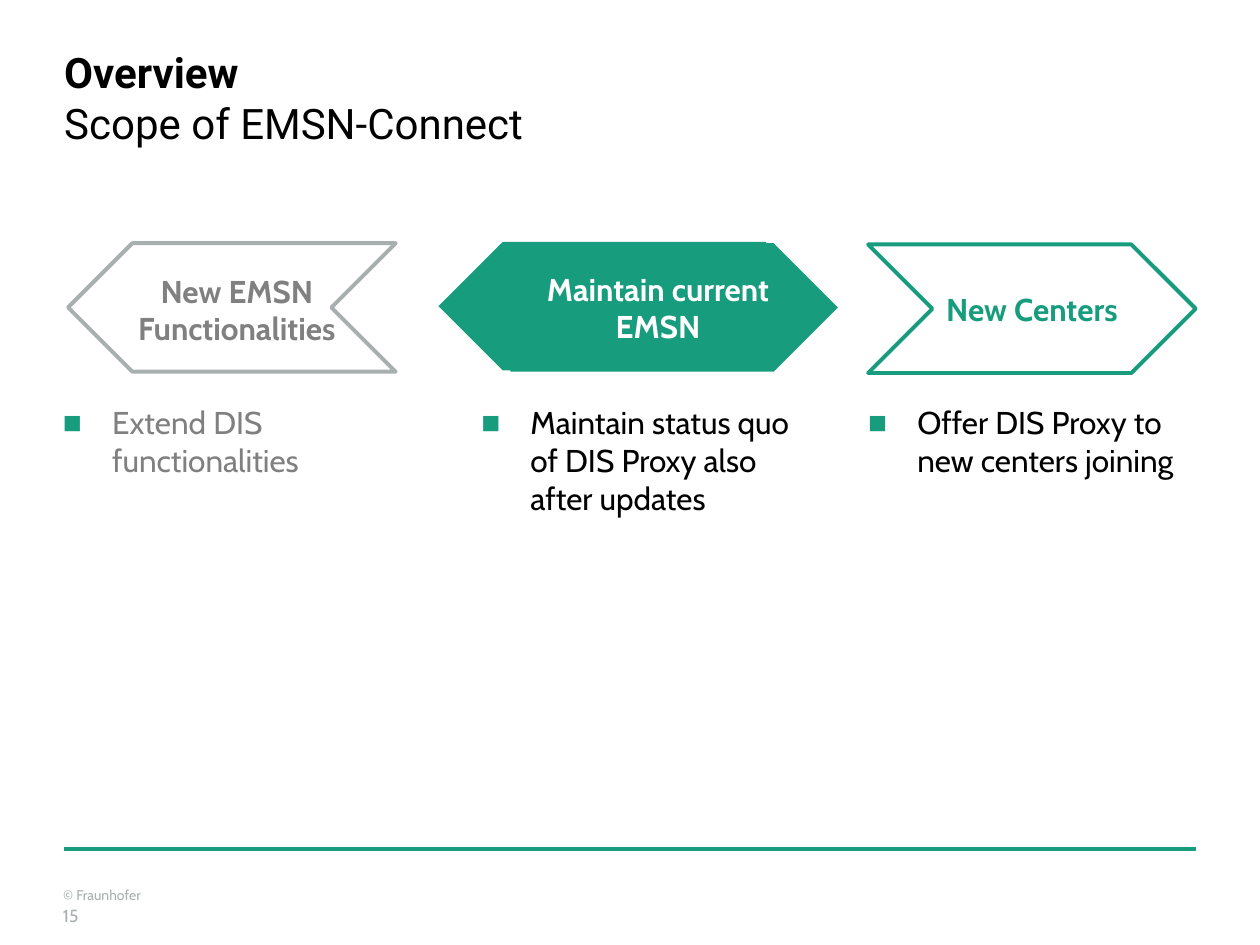
from pptx import Presentation
from pptx.dml.color import RGBColor
from pptx.enum.shapes import MSO_CONNECTOR as Connector, MSO_SHAPE as Shape
from pptx.enum.text import MSO_ANCHOR as Anchor, MSO_AUTO_SIZE as AutoSize, PP_ALIGN as Align
from pptx.oxml.ns import qn
from pptx.util import Emu, Pt
from lxml.etree import SubElement

EMU_PER_PX = 9144
GREEN, SILVER, GRAY = "179C7D", "A8AFAF", "808080"
BLACK, WHITE = "000000", "FFFFFF"


def px(*lengths):
    return [Emu(length * EMU_PER_PX) for length in lengths]


def rgb(value):
    return RGBColor.from_string(value)


class SlideBuilder:
    body_font = "Cabin"
    title_font = "Roboto"

    def __init__(self, page):
        self.page = page

    def group(self):
        return self.page.shapes.add_group_shape().shapes

    def frame(self, box, anchor=Anchor.TOP, insets=(0, 0, 0, 0)):
        frame = box.text_frame
        frame.word_wrap = True
        frame.auto_size = AutoSize.NONE
        frame.vertical_anchor = anchor
        (frame.margin_left, frame.margin_top,
         frame.margin_right, frame.margin_bottom) = px(*insets)
        return frame

    def span(self, para, text, size, color, bold=False, font=None):
        span = para.add_run()
        span.text = text
        span.font.name = font or self.body_font
        span.font.size = Pt(size)
        span.font.bold = bold
        span.font.color.rgb = rgb(color)

    def title(self, heading, subheading, *place):
        box = self.page.shapes.title
        box.left, box.top, box.width, box.height = px(*place)
        para = self.frame(box).paragraphs[0]
        para.alignment = Align.LEFT
        self.span(para, heading, 24, BLACK, True, self.title_font)
        para.add_line_break()
        self.span(para, subheading, 24, BLACK, False, self.title_font)

    def text(self, text, size, color, *place, shapes=None, **layout):
        box = (shapes or self.page.shapes).add_textbox(*px(*place))
        para = self.frame(box, **layout).paragraphs[0]
        self.span(para, text, size, color)
        return para

    def label(self, box, text, color):
        para = self.frame(box, Anchor.MIDDLE).paragraphs[0]
        para.alignment = Align.CENTER
        self.span(para, text, 18, color, True)

    def arrow(self, kind, *place, fill=None, line=None, rotation=0, shapes=None):
        arrow = (shapes or self.page.shapes).add_shape(kind, *px(*place))
        arrow.shadow.inherit = False
        arrow.rotation = rotation
        if fill:
            arrow.fill.solid()
            arrow.fill.fore_color.rgb = rgb(fill)
        else:
            arrow.fill.background()
        if line:
            arrow.line.color.rgb = rgb(line)
            arrow.line.width = Pt(2.25)
        else:
            arrow.line.fill.background()
        return arrow

    def bullet(self, text, color, *place):
        para = self.text(text, 18, color, *place)
        indent = px(39)[0]
        properties = para._p.get_or_add_pPr()
        properties.set("marL", str(indent))
        properties.set("indent", str(-indent))
        bullet_color = SubElement(properties, qn("a:buClr"))
        SubElement(bullet_color, qn("a:srgbClr"), val=GREEN)
        SubElement(properties, qn("a:buFont"), typeface="Arial")
        SubElement(properties, qn("a:buChar"), char="■")

    def rule(self, *ends):
        line = self.page.shapes.add_connector(Connector.STRAIGHT, *px(*ends))
        line.line.color.rgb = rgb(GREEN)
        line.line.width = Pt(2.5)
        SubElement(line._element.spPr, qn("a:effectLst"))


def main():
    deck = Presentation()
    deck.slide_width, deck.slide_height = px(1000, 750)
    slide = SlideBuilder(deck.slides.add_slide(deck.slide_layouts[5]))

    slide.text("© Fraunhofer", 8, SILVER, 50, 704, 98, 13)
    slide.rule(51, 674, 949, 674)
    slide.title("Overview", "Scope of EMSN-Connect", 51, 37, 898, 81)
    slide.text("15", 10, SILVER, 50, 700, 233, 40,
               anchor=Anchor.BOTTOM, insets=(0, 5, 10, 5))

    size = 260, 102
    centers = slide.arrow(Shape.CHEVRON, 689, 194, *size, line=GREEN)
    slide.label(centers, "New Centers", GREEN)

    current = slide.group()
    slide.arrow(Shape.PENTAGON, 348, 192, *size, fill=GREEN, rotation=180, shapes=current)
    front = slide.arrow(Shape.PENTAGON, 405, 193, *size, fill=GREEN, shapes=current)
    slide.label(front, "Maintain current EMSN", WHITE)

    features = slide.group()
    slide.arrow(Shape.CHEVRON, 54, 193, *size, line=SILVER, rotation=180, shapes=features)
    caption = features.add_textbox(*px(90, 210, 196, 71))
    slide.label(caption, "New EMSN Functionalities", GRAY)

    for left, text, color in (
        (382, "Maintain status quo of DIS Proxy also after updates", BLACK),
        (689, "Offer DIS Proxy to new centers joining", BLACK),
        (50, "Extend DIS functionalities", GRAY),
    ):
        slide.bullet(text, color, left, 320, 260, 339)

    deck.save("out.pptx")


if __name__ == "__main__":
    main()
